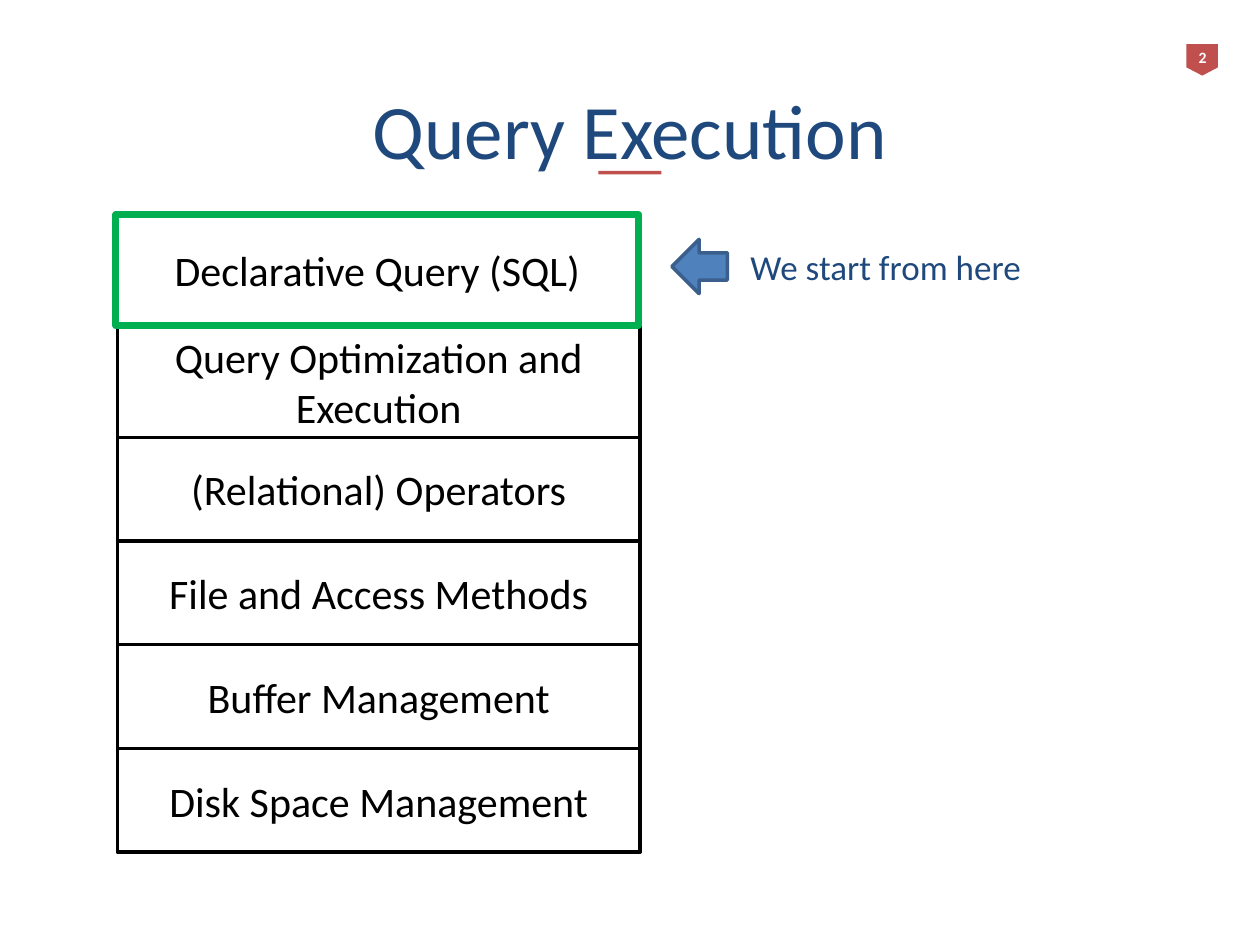
import dataclasses

import lxml.etree
import pptx
import pptx.dml.color
import pptx.enum.shapes
import pptx.enum.text
import pptx.oxml.ns
import pptx.util

Pt = pptx.util.Pt
Kind = pptx.enum.shapes.MSO_SHAPE
Align = pptx.enum.text.PP_ALIGN
Anchor = pptx.enum.text.MSO_ANCHOR


@dataclasses.dataclass(frozen=True)
class Theme:
    font: str = "Calibri"
    navy: str = "1F497D"
    red: str = "C0504D"
    green: str = "00B050"
    blue: str = "4F81BD"
    edge: str = "3A5F8C"
    black: str = "000000"
    white: str = "FFFFFF"
    head: int = 44
    layer: int = 24
    note: int = 20
    page: int = 9


def tint(code):
    return pptx.dml.color.RGBColor.from_string(code)


def write(frame, text, *, font, size, color, bold=False,
          align=Align.CENTER, anchor=Anchor.MIDDLE, wrap=True):
    frame.word_wrap = wrap
    frame.vertical_anchor = anchor
    line = frame.paragraphs[0]
    line.alignment = align
    run = line.add_run()
    run.text = text
    run.font.name = font
    run.font.size = Pt(size)
    run.font.bold = bold
    run.font.color.rgb = tint(color)
    return line


def place(shape, box):
    shape.left, shape.top, shape.width, shape.height = map(Pt, box)


class Deck:
    """Holds the theme and the slide being drawn."""

    def __init__(self, theme):
        self.theme = theme
        self.file = pptx.Presentation()
        self.file.slide_width, self.file.slide_height = Pt(720), Pt(540)
        self.slide = self.file.slides.add_slide(self.file.slide_layouts[1])

    def title(self, text, box):
        shape = self.slide.shapes.title
        place(shape, box)
        write(shape.text_frame, text, font=self.theme.font,
              size=self.theme.head, color=self.theme.navy)

    def body(self, text, box, indent):
        """Fill the body placeholder with one indented line, no bullet."""
        shape = self.slide.placeholders[1]
        place(shape, box)
        line = write(shape.text_frame, text, font=self.theme.font,
                     size=self.theme.note, color=self.theme.navy,
                     align=Align.LEFT, anchor=Anchor.TOP)
        line.space_before = Pt(4)
        props = line._p.get_or_add_pPr()
        props.set("marL", str(Pt(indent)))
        props.set("indent", "0")
        lxml.etree.SubElement(props, pptx.oxml.ns.qn("a:buNone"))

    def shape(self, kind, box, fill, edge=None, width=2):
        shape = self.slide.shapes.add_shape(kind, *map(Pt, box))
        shape.shadow.inherit = False
        shape.fill.solid()
        shape.fill.fore_color.rgb = tint(fill)
        if edge:
            shape.line.color.rgb = tint(edge)
            shape.line.width = Pt(width)
        else:
            shape.line.fill.background()
        return shape

    def layer(self, text, box, edge, width=2):
        shape = self.shape(Kind.RECTANGLE, box, self.theme.white, edge, width)
        write(shape.text_frame, text, font=self.theme.font,
              size=self.theme.layer, color=self.theme.black)

    def badge(self, text, box, label):
        """Draw the page number on a tag that points down."""
        tag = self.shape(Kind.PENTAGON, box, self.theme.red)
        tag.rotation = 90
        tag.adjustments[0] = 0.26
        area = self.slide.shapes.add_textbox(*map(Pt, label))
        write(area.text_frame, text, font=self.theme.font,
              size=self.theme.page, color=self.theme.white, bold=True,
              anchor=Anchor.TOP, wrap=False)


def main():
    theme = Theme()
    deck = Deck(theme)
    deck.badge("2", (678, 25.2, 18, 18), (675.2, 23.8, 24, 18))
    deck.title("Query Execution", (36, 43.2, 648, 60.5))
    deck.shape(Kind.RECTANGLE, (342, 97.7, 36, 1.9), theme.red)

    left, wide, tall, short = 67, 298.8, 63.4, 59.25
    layers = [
        ("Query Optimization and Execution", tall),
        ("(Relational) Operators", short),
        ("File and Access Methods", short),
        ("Buffer Management", short),
        ("Disk Space Management", short),
    ]
    top = 186.5
    for text, height in layers:
        deck.layer(text, (left, top, wide, height), theme.black)
        top += height
    deck.layer("Declarative Query (SQL)", (66.2, 122.6, wide, tall),
               theme.green, 4)

    deck.body("We start from here", (394.6, 136.8, 278.6, 349.2), 27)
    deck.shape(Kind.LEFT_ARROW, (384, 136.8, 31.7, 31), theme.blue, theme.edge)
    deck.file.save("out.pptx")


if __name__ == "__main__":
    main()
